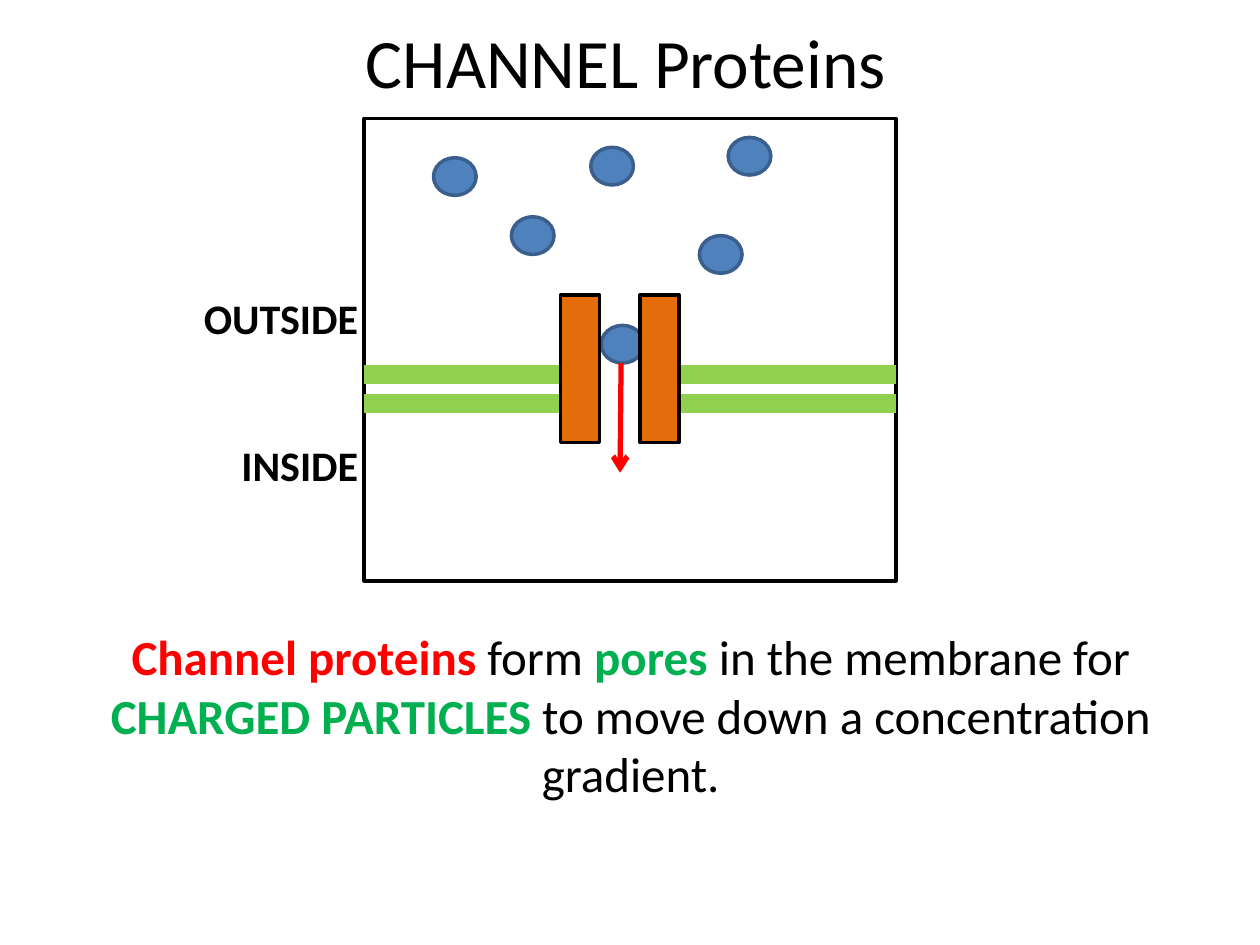
from lxml import etree
from pptx import Presentation
from pptx.dml.color import RGBColor
from pptx.enum import shapes, text
from pptx.oxml.ns import qn
from pptx.util import Cm, Pt

COLORS = {
    "black": "000000", "red": "FF0000", "green": "00B050", "membrane": "92D050",
    "protein": "E46C0A", "particle": "4F81BD", "particle_edge": "3A5F8C",
}
PARTICLE_SIZE = (0.86, 0.76)


def rgb(name):
    return RGBColor.from_string(COLORS[name])


def add_text(slide, box, runs, size, anchor=text.MSO_ANCHOR.TOP, spacing=None):
    """Centred text; runs are (wording, colour, bold)."""
    frame = slide.shapes.add_textbox(*map(Cm, box)).text_frame
    frame.word_wrap = True
    frame.vertical_anchor = anchor
    paragraph = frame.paragraphs[0]
    paragraph.alignment = text.PP_ALIGN.CENTER
    paragraph.line_spacing = spacing
    for wording, color, bold in runs:
        run = paragraph.add_run()
        run.text = wording
        run.font.name = "Calibri"
        run.font.size = Pt(size)
        run.font.bold = bold
        run.font.color.rgb = rgb(color)


def add_solid(slide, kind, box, fill, edge):
    shape = slide.shapes.add_shape(kind, *map(Cm, box))
    shape.shadow.inherit = False
    if fill:
        shape.fill.solid()
        shape.fill.fore_color.rgb = rgb(fill)
    else:
        shape.fill.background()
    shape.line.color.rgb = rgb(edge)
    shape.line.width = Pt(2)


def add_line(slide, points, color, width, arrow=False):
    line = slide.shapes.add_connector(shapes.MSO_CONNECTOR.STRAIGHT, *map(Cm, points))
    line.line.color.rgb = rgb(color)
    line.line.width = Pt(width)
    if arrow:
        etree.SubElement(line.line._get_or_add_ln(), qn("a:tailEnd"), type="arrow")
    etree.SubElement(line._element.spPr, qn("a:effectLst"))


def add_diagram(slide, left, top, width, height):
    """Membrane with a channel protein that lets a particle through."""
    rectangle = shapes.MSO_SHAPE.RECTANGLE

    def add_particle(x, y):
        add_solid(slide, shapes.MSO_SHAPE.OVAL, (left + x, top + y, *PARTICLE_SIZE),
                  "particle", "particle_edge")

    # Cell frame and the particle in the pore
    add_solid(slide, rectangle, (left, top, width, height), None, "black")
    add_particle(4.78, 4.17)

    # Two membrane layers, open at the channel
    for y in (5.16, 5.74):
        for start, end in ((0, 4.06), (6.35, width)):
            add_line(slide, (left + start, top + y, left + end, top + y),
                     "membrane", 10.75)

    # Channel protein walls
    for x in (3.96, 5.56):
        add_solid(slide, rectangle, (left + x, top + 3.56, 0.79, 2.97),
                  "protein", "black")

    # Particles outside
    for x, y in ((7.34, 0.38), (2.97, 1.98), (6.76, 2.36), (4.57, 0.58), (1.4, 0.79)):
        add_particle(x, y)

    # Direction of movement
    add_line(slide, (left + 5.18, top + 4.93, left + 5.16, top + 7.14),
             "red", 3, arrow=True)

    # Side labels
    for label, x, y in (("OUTSIDE", -3.76, 3.38), ("INSIDE", -3.38, 6.35)):
        add_text(slide, (left + x, top + y, 4.17, 1.27), [(label, "black", True)], 24)


def add_title(slide, *box):
    add_text(slide, box, [("CHANNEL Proteins", "black", False)], 39.6,
             text.MSO_ANCHOR.MIDDLE, 0.9)


def add_explanation(slide, *box):
    add_text(slide, box, [
        ("Channel proteins ", "red", True),
        ("form ", "black", False),
        ("pores ", "green", True),
        ("in the membrane for ", "black", False),
        ("CHARGED PARTICLES ", "green", True),
        ("to move down a concentration gradient.", "black", False),
    ], 28)


def main():
    presentation = Presentation()
    presentation.slide_width, presentation.slide_height = Cm(25.4), Cm(19.05)
    slide = presentation.slides.add_slide(presentation.slide_layouts[6])
    add_title(slide, 1.19, 0.41, 22.86, 1.83)
    add_diagram(slide, 7.34, 2.39, 10.72, 9.32)
    add_explanation(slide, 0.41, 12.5, 24.61, 5.05)
    presentation.save("out.pptx")


if __name__ == "__main__":
    main()
